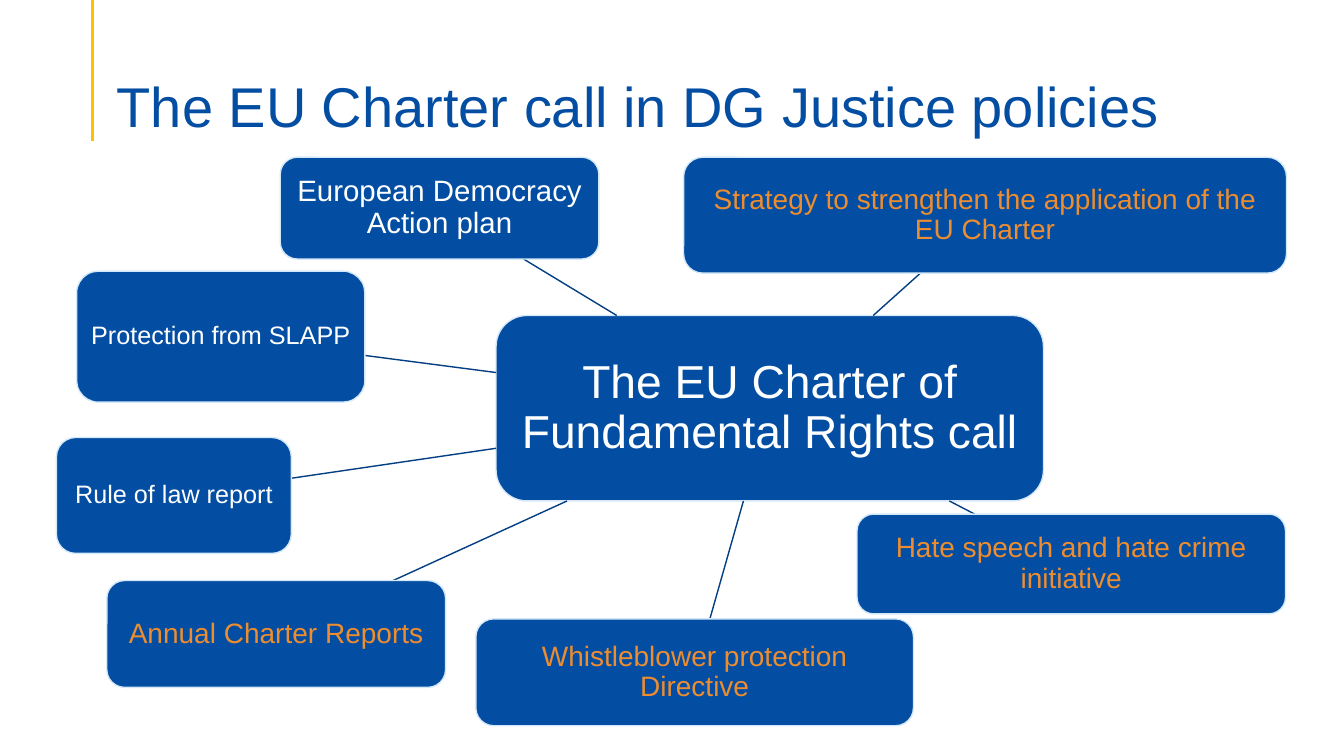
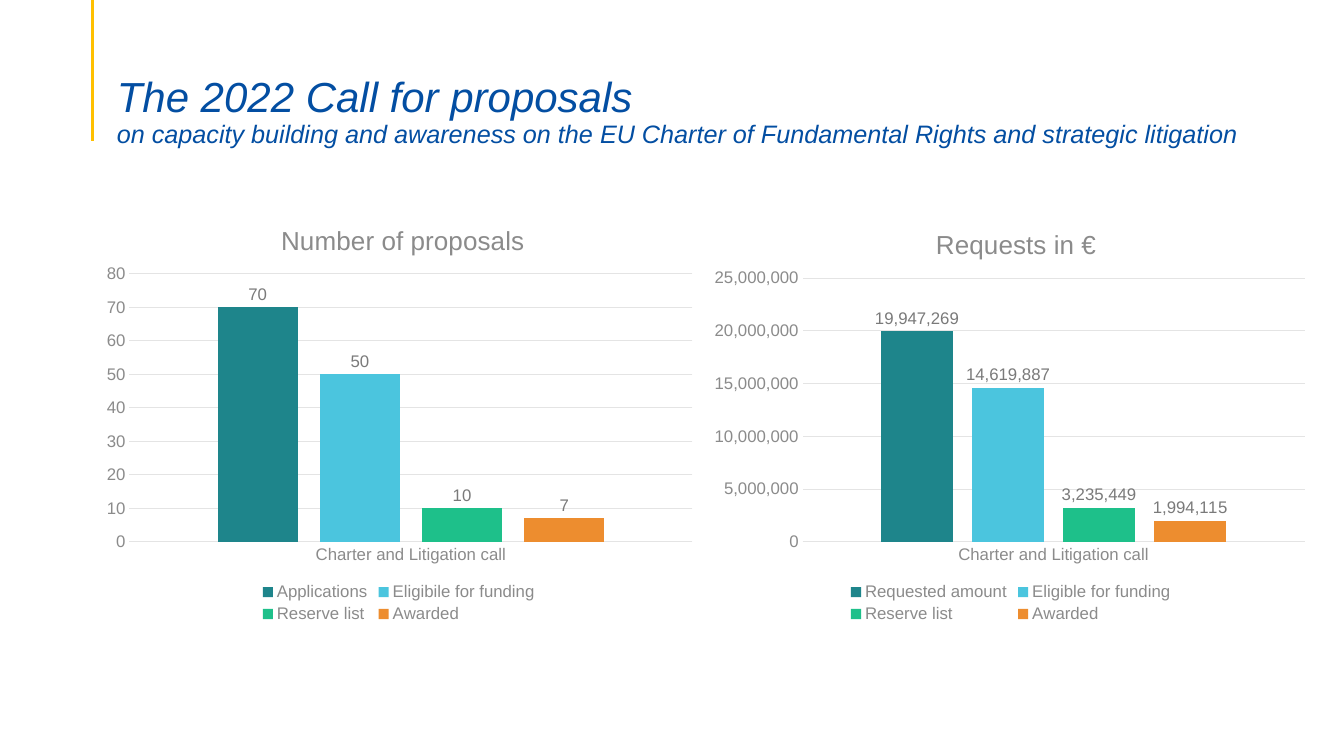
from lxml import etree
from pptx import Presentation
from pptx import util as u
from pptx.chart import data as chart_data
from pptx.dml.color import RGBColor
from pptx.enum import chart as charts, shapes, text
from pptx.oxml import ns

PX = 9144  # 100 px to the inch
FONT = "Arial"
COLOURS = {
    name: RGBColor.from_string(value)
    for name, value in {
        "blue": "034EA2",
        "spoke": "023E82",
        "outline": "D3E8F9",
        "yellow": "FFC000",
        "white": "FFFFFF",
        "orange": "ED8D2F",
        "teal": "1E858B",
        "sky": "4BC5DE",
        "green": "1EC08A",
        "grey": "8B8B8B",
        "label": "7A7A7A",
        "grid": "E4E4E4",
    }.items()
}


def draw_line(page, start, end, colour, width):
    line = page.shapes.add_connector(
        shapes.MSO_CONNECTOR.STRAIGHT, *(round(value * PX) for value in (*start, *end))
    )
    line.line.color.rgb = COLOURS[colour]
    line.line.width = u.Pt(width)
    etree.SubElement(line.element.spPr, ns.qn("a:effectLst"))


def place_in_chart(element, index, **fractions):
    """Fix a chart part's place, as fractions of the whole chart."""
    for old in element.findall(ns.qn("c:layout")):
        element.remove(old)
    layout = etree.Element(ns.qn("c:layout"))
    manual = etree.SubElement(layout, ns.qn("c:manualLayout"))
    if "w" in fractions:
        etree.SubElement(manual, ns.qn("c:layoutTarget"), val="inner")
    for axis in "xy":
        etree.SubElement(manual, ns.qn(f"c:{axis}Mode"), val="edge")
    for name, value in fractions.items():
        etree.SubElement(manual, ns.qn(f"c:{name}"), val=str(value))
    element.insert(index, layout)


deck = Presentation()
deck.slide_width, deck.slide_height = 1333 * PX, 750 * PX

# Pages with their shared rule and title style
titles = [
    (1150, 86, False, [("The EU Charter call in DG Justice policies", 40)]),
    (1189, 95, True, [
        ("The 2022 Call for proposals", 30),
        ("on capacity building and awareness on the EU Charter of "
         "Fundamental Rights and strategic litigation", 18),
    ]),
]
pages = []
for width, height, italic, lines in titles:
    page = deck.slides.add_slide(deck.slide_layouts[6])
    pages.append(page)
    draw_line(page, (92, 0), (92, 140), "yellow", 2.25)
    box = page.shapes.add_textbox(106 * PX, 53 * PX, width * PX, height * PX)
    frame = box.text_frame
    frame.word_wrap = True
    frame.vertical_anchor = text.MSO_ANCHOR.BOTTOM
    frame.margin_bottom = 0
    para = frame.paragraphs[0]
    para.line_spacing = 0.9
    for number, (words, size) in enumerate(lines):
        if number:
            para.add_line_break()
        span = para.add_run()
        span.text = words
        span.font.name, span.font.size = FONT, u.Pt(size)
        span.font.italic = italic
        span.font.color.rgb = COLOURS["blue"]
diagram_page, chart_page = pages

# Hub first, then the policies around it
nodes = [
    (492, 313, 543, 184, "The EU Charter of Fundamental Rights call", 33, "white"),
    (278, 156, 316, 101, "European Democracy Action plan", 21, "white"),
    (472, 614, 434, 106, "Whistleblower protection Directive", 20, "orange"),
    (56, 434, 233, 115, "Rule of law report", 18, "white"),
    (678, 156, 598, 115, "Strategy to strengthen the application of the EU Charter", 20, "orange"),
    (106, 576, 336, 106, "Annual Charter Reports", 20, "orange"),
    (850, 510, 425, 99, "Hate speech and hate crime initiative", 20, "orange"),
    (76, 269, 286, 130, "Protection from SLAPP", 18, "white"),
]
hub_left, hub_top, hub_width, hub_height = nodes[0][:4]
hub_x, hub_y = hub_left + hub_width / 2, hub_top + hub_height / 2

for left, top, width, height, words, size, colour in nodes:
    dx, dy = left + width / 2 - hub_x, top + height / 2 - hub_y
    if dx or dy:
        # The spoke runs between the centres, cut at the two outlines
        leave = min(hub_width / 2 / abs(dx), hub_height / 2 / abs(dy))
        reach = 1 - min(width / 2 / abs(dx), height / 2 / abs(dy))
        start, end = ((hub_x + dx * t, hub_y + dy * t) for t in (leave, reach))
        draw_line(diagram_page, start, end, "spoke", 1)

    node = diagram_page.shapes.add_shape(
        shapes.MSO_SHAPE.ROUNDED_RECTANGLE, left * PX, top * PX, width * PX, height * PX
    )
    node.shadow.inherit = False
    node.fill.solid()
    node.fill.fore_color.rgb = COLOURS["blue"]
    node.line.color.rgb = COLOURS["outline"]
    node.line.width = u.Pt(1)
    frame = node.text_frame
    frame.word_wrap = True
    frame.vertical_anchor = text.MSO_ANCHOR.MIDDLE
    inset = round(size * 0.28) * PX
    frame.margin_left = frame.margin_right = inset
    frame.margin_top = frame.margin_bottom = inset
    para = frame.paragraphs[0]
    para.alignment = text.PP_ALIGN.CENTER
    para.line_spacing = 0.9
    span = para.add_run()
    span.text = words
    span.font.name, span.font.size = FONT, u.Pt(size)
    span.font.color.rgb = COLOURS[colour]

# Two column charts side by side
chart_width = 607
series_colours = ["teal", "sky", "green", "orange"]
chart_specs = [
    {
        "title": "Number of proposals",
        "format": "General",
        "top": 80,
        "step": 10,
        "title_place": {"x": 0.3, "y": 0.04},
        "plot_place": {"x": 0.06, "y": 0.17, "w": 0.92, "h": 0.63},
        "series": {"Applications": 70, "Eligibile for funding": 50,
                   "Reserve list": 10, "Awarded": 7},
    },
    {
        "title": "Requests in €",
        "format": "#,##0",
        "top": 25000000,
        "step": 5000000,
        "title_place": {"x": 0.37, "y": 0.05},
        "plot_place": {"x": 0.16, "y": 0.18, "w": 0.82, "h": 0.62},
        "series": {"Requested amount": 19947269, "Eligible for funding": 14619887,
                   "Reserve list": 3235449, "Awarded": 1994115},
    },
]
for column, details in enumerate(chart_specs):
    table = chart_data.CategoryChartData(number_format=details["format"])
    table.categories = ["Charter and Litigation call"]
    for name, value in details["series"].items():
        table.add_series(name, [value])
    chart = chart_page.shapes.add_chart(
        charts.XL_CHART_TYPE.COLUMN_CLUSTERED,
        (92 + column * chart_width) * PX, 200 * PX, chart_width * PX, 422 * PX, table,
    ).chart
    chart.font.name, chart.font.size = FONT, u.Pt(12)
    chart.font.color.rgb = COLOURS["grey"]

    chart.has_title = True
    span = chart.chart_title.text_frame.paragraphs[0].add_run()
    span.text = details["title"]
    span.font.name, span.font.size, span.font.bold = FONT, u.Pt(18.6), False
    span.font.color.rgb = COLOURS["grey"]
    place_in_chart(chart.chart_title.element, 1, **details["title_place"])
    place_in_chart(chart.element.chart.plotArea, 0, **details["plot_place"])

    chart.has_legend = True
    chart.legend.position = charts.XL_LEGEND_POSITION.BOTTOM
    chart.legend.include_in_layout = False

    for axis in (chart.category_axis, chart.value_axis):
        axis.major_tick_mark = axis.minor_tick_mark = charts.XL_TICK_MARK.NONE
    chart.category_axis.format.line.color.rgb = COLOURS["grid"]
    chart.category_axis.format.line.width = u.Pt(0.75)
    values = chart.value_axis
    values.minimum_scale, values.maximum_scale = 0, details["top"]
    values.major_unit = details["step"]
    values.format.line.fill.background()
    values.major_gridlines.format.line.color.rgb = COLOURS["grid"]
    values.major_gridlines.format.line.width = u.Pt(0.75)
    values.tick_labels.number_format = details["format"]
    values.tick_labels.number_format_is_linked = False

    plot = chart.plots[0]
    plot.vary_by_categories = False
    plot.gap_width, plot.overlap = 219, -27
    for series, colour in zip(plot.series, series_colours):
        series.format.fill.solid()
        series.format.fill.fore_color.rgb = COLOURS[colour]
        labels = series.data_labels
        labels.show_value = True
        labels.position = charts.XL_LABEL_POSITION.OUTSIDE_END
        labels.number_format = details["format"]
        labels.number_format_is_linked = False
        labels.font.name, labels.font.size = FONT, u.Pt(12)
        labels.font.color.rgb = COLOURS["label"]

deck.save("out.pptx")
